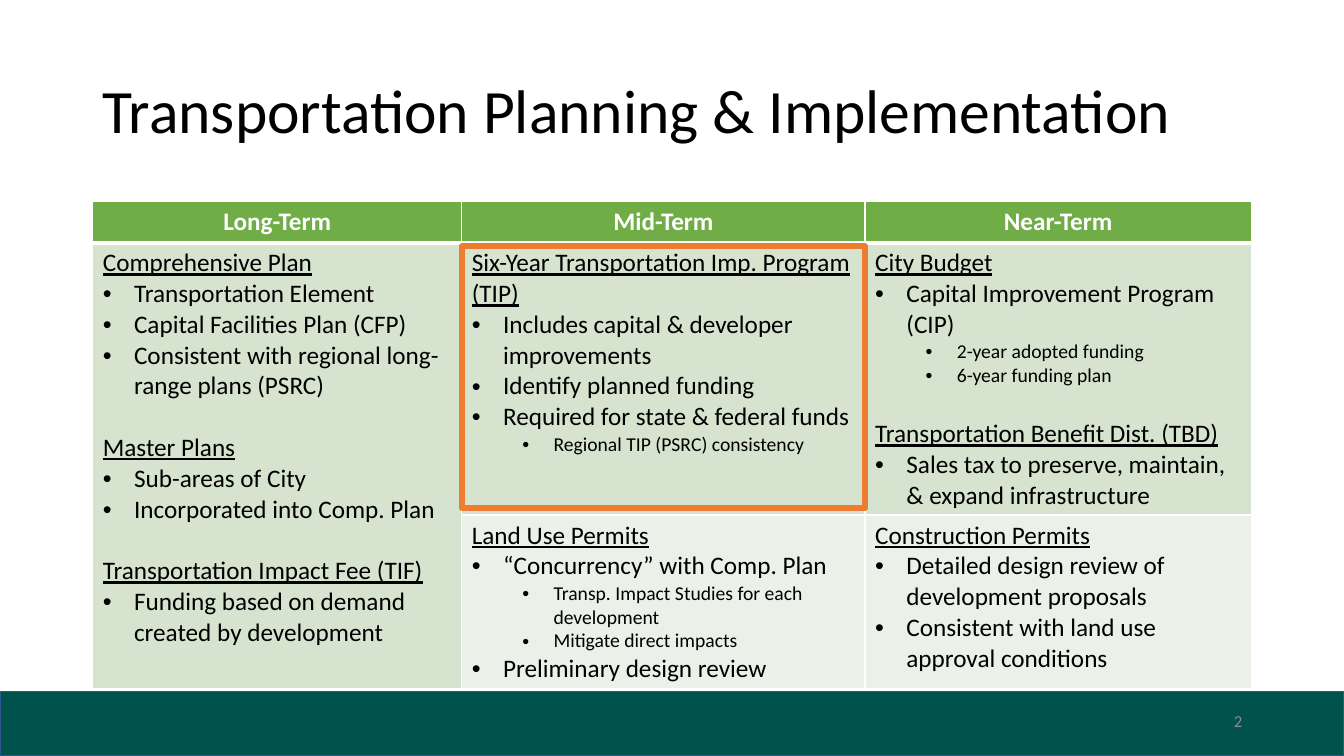
"""Build the transportation planning and implementation slide."""
from lxml.etree import SubElement
from pptx import Presentation
from pptx.dml.color import RGBColor
from pptx.enum.shapes import MSO_SHAPE as Shape
from pptx.enum.text import MSO_ANCHOR as Anchor, PP_ALIGN as Align
from pptx.oxml import parse_xml
from pptx.oxml.ns import nsdecls, qn
from pptx.util import Inches, Pt

TITLE = "Transportation Planning & Implementation"
HEADERS = ["Long-Term", "Mid-Term", "Near-Term"]
HEAD, ITEM, SUB = range(3)
CELLS = {
    (1, 0): [
        (HEAD, "Comprehensive Plan"),
        (ITEM, "Transportation Element"),
        (ITEM, "Capital Facilities Plan (CFP)"),
        (ITEM, "Consistent with regional long-range plans (PSRC)"),
        (HEAD, "Master Plans"),
        (ITEM, "Sub-areas of City"),
        (ITEM, "Incorporated into Comp. Plan"),
        (HEAD, "Transportation Impact Fee (TIF)"),
        (ITEM, "Funding based on demand created by development"),
    ],
    (1, 1): [
        (HEAD, "Six-Year Transportation Imp. Program"),
        (HEAD, "(TIP)"),
        (ITEM, "Includes capital & developer improvements"),
        (ITEM, "Identify planned funding"),
        (ITEM, "Required for state & federal funds"),
        (SUB, "Regional TIP (PSRC) consistency"),
    ],
    (1, 2): [
        (HEAD, "City Budget"),
        (ITEM, "Capital Improvement Program (CIP)"),
        (SUB, "2-year adopted funding"),
        (SUB, "6-year funding plan"),
        (HEAD, "Transportation Benefit Dist. (TBD)"),
        (ITEM, "Sales tax to preserve, maintain, & expand infrastructure"),
    ],
    (2, 1): [
        (HEAD, "Land Use Permits"),
        (ITEM, "“Concurrency” with Comp. Plan"),
        (SUB, "Transp. Impact Studies for each development"),
        (SUB, "Mitigate direct impacts"),
        (ITEM, "Preliminary design review"),
    ],
    (2, 2): [
        (HEAD, "Construction Permits"),
        (ITEM, "Detailed design review of development proposals"),
        (ITEM, "Consistent with land use approval conditions"),
    ],
}

WHITE = RGBColor(0xFF, 0xFF, 0xFF)
BLACK = RGBColor(0, 0, 0)
GRAY = RGBColor(0x8C, 0x8C, 0x8C)
TEAL = RGBColor(0, 0x52, 0x4C)
NAVY = RGBColor(0x32, 0x54, 0x91)
ORANGE = RGBColor(0xED, 0x7D, 0x31)
ROW_FILLS = [RGBColor(0x70, 0xAD, 0x47), RGBColor(0xD5, 0xE3, 0xCF), RGBColor(0xEB, 0xF1, 0xE9)]

WIDTH, HEIGHT = 13.33, 7.5
LEFT, TOP = 0.92, 2
COLS = [3.66, 4, 3.83]
ROWS = [0.41, 2.7, 1.72]
BAR = 0.64
HANG = 0.31
SUB_INDENT = 0.81
GAP = Pt(22)

HEADER_FONT = {"size": Pt(18), "bold": True}
LEVEL_FONTS = {
    HEAD: {"size": Pt(18), "bold": False, "underline": True},
    ITEM: {"size": Pt(18), "bold": False},
    SUB: {"size": Pt(14), "bold": False},
}


def add_run(p, text, color, fonts):
    r = p.add_run()
    r.text = text
    r.font.name = "Calibri"
    r.font.color.rgb = color
    for name, value in fonts.items():
        setattr(r.font, name, value)


def add_text(slide, box, text, color, size, align):
    tf = slide.shapes.add_textbox(*map(Inches, box)).text_frame
    tf.word_wrap = True
    tf.vertical_anchor = Anchor.MIDDLE
    p = tf.paragraphs[0]
    p.alignment = align
    add_run(p, text, color, {"size": Pt(size)})
    return p


def add_rect(slide, box, line, weight, fill=None):
    s = slide.shapes.add_shape(Shape.RECTANGLE, *map(Inches, box))
    s.shadow.inherit = False
    if fill is None:
        s.fill.background()
    else:
        s.fill.solid()
        s.fill.fore_color.rgb = fill
    s.line.color.rgb = line
    s.line.width = Pt(weight)


def add_bullet(p, indent):
    pPr = p._p.get_or_add_pPr()
    pPr.set("marL", str(Inches(indent)))
    pPr.set("indent", str(-Inches(HANG)))
    SubElement(pPr, qn("a:buFont"), typeface="Arial")
    SubElement(pPr, qn("a:buChar"), char="•")


def style_cell(cell, row):
    cell.fill.solid()
    cell.fill.fore_color.rgb = ROW_FILLS[row]
    tcPr = cell._tc.get_or_add_tcPr()
    thick = {0: "B", 1: "T"}.get(row)
    for i, side in enumerate("LRTB"):
        width = Pt(3 if side == thick else 1)
        tcPr.insert(i, parse_xml(
            f'<a:ln{side} {nsdecls("a")} w="{width}"><a:solidFill>'
            f'<a:srgbClr val="{WHITE}"/></a:solidFill></a:ln{side}>'))


def fill_cell(cell, lines):
    tf = cell.text_frame
    previous = HEAD
    for i, (level, text) in enumerate(lines):
        p = tf.add_paragraph() if i else tf.paragraphs[0]
        if level != HEAD:
            p.level = level - ITEM
            add_bullet(p, SUB_INDENT if level == SUB else HANG)
        elif previous != HEAD:
            p.space_before = GAP
        add_run(p, text, BLACK, LEVEL_FONTS[level])
        previous = level


def add_plan_table(slide):
    box = (LEFT, TOP, sum(COLS), sum(ROWS))
    table = slide.shapes.add_table(len(ROWS), len(COLS), *map(Inches, box)).table
    for col, width in zip(table.columns, COLS):
        col.width = Inches(width)
    for r, height in enumerate(ROWS):
        table.rows[r].height = Inches(height)
        for c in range(len(COLS)):
            style_cell(table.cell(r, c), r)
    table.cell(1, 0).merge(table.cell(2, 0))
    for c, text in enumerate(HEADERS):
        p = table.cell(0, c).text_frame.paragraphs[0]
        p.alignment = Align.CENTER
        add_run(p, text, WHITE, HEADER_FONT)
    for (r, c), lines in CELLS.items():
        fill_cell(table.cell(r, c), lines)


def main():
    prs = Presentation()
    prs.slide_width, prs.slide_height = Inches(WIDTH), Inches(HEIGHT)
    slide = prs.slides.add_slide(prs.slide_layouts[6])
    add_rect(slide, (0, HEIGHT - BAR, WIDTH, BAR), NAVY, 1, TEAL)
    title = add_text(slide, (LEFT, 0.4, 11.5, 1.45), TITLE, BLACK, 44, Align.LEFT)
    title.line_spacing = 0.9
    add_plan_table(slide)
    add_rect(slide, (LEFT + COLS[0], TOP + ROWS[0] + 0.03, COLS[1], 2.6), ORANGE, 4)
    add_text(slide, (10.42, 6.95, 2, 0.4), "2", GRAY, 12, Align.RIGHT)
    prs.save("out.pptx")


if __name__ == "__main__":
    main()
